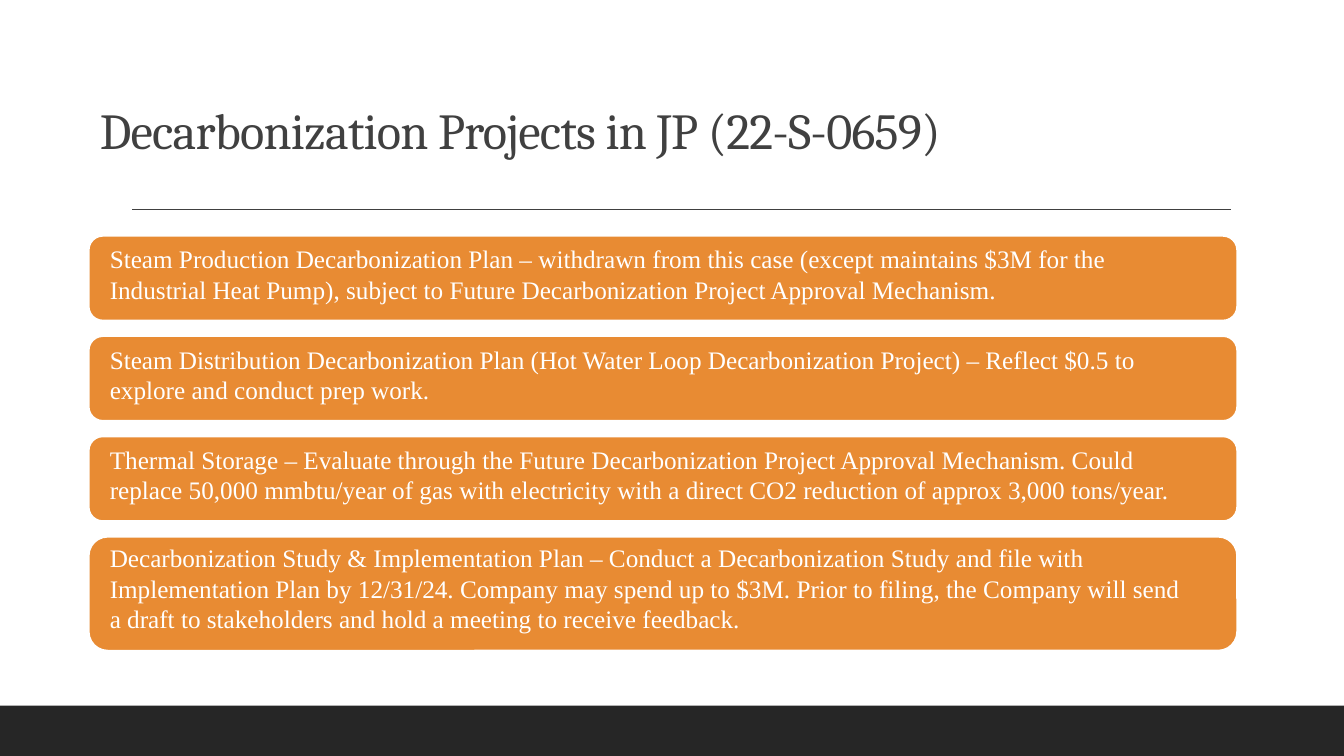
from lxml import etree
from pptx import Presentation
from pptx.dml.color import RGBColor
from pptx.enum.shapes import MSO_CONNECTOR, MSO_SHAPE
from pptx.enum.text import MSO_ANCHOR, MSO_AUTO_SIZE, PP_ALIGN
from pptx.oxml.ns import qn
from pptx.util import Inches, Pt

STRAIGHT = MSO_CONNECTOR.STRAIGHT
RECTANGLE, ROUNDED = MSO_SHAPE.RECTANGLE, MSO_SHAPE.ROUNDED_RECTANGLE
MIDDLE, BOTTOM = MSO_ANCHOR.MIDDLE, MSO_ANCHOR.BOTTOM
NO_AUTOFIT = MSO_AUTO_SIZE.NONE
LEFT = PP_ALIGN.LEFT

WIDTH, HEIGHT = 13.33, 7.5
DARK, GREY, ORANGE, WHITE = "262626", "404040", "E88B33", "FFFFFF"
TITLE = "Decarbonization Projects in JP (22-S-0659)"
CARD_GAP = 0.155
CORNER_INSET = 0.05  # text margin a rounded corner adds, per inch of height

# Card height and wording
PROJECTS = [
    (0.84, "Steam Production Decarbonization Plan – withdrawn from this case "
           "(except maintains $3M for the Industrial Heat Pump), subject to "
           "Future Decarbonization Project Approval Mechanism."),
    (0.84, "Steam Distribution Decarbonization Plan (Hot Water Loop "
           "Decarbonization Project) – Reflect $0.5 to explore and conduct "
           "prep work."),
    (0.84, "Thermal Storage – Evaluate through the Future Decarbonization "
           "Project Approval Mechanism. Could replace 50,000 mmbtu/year of gas "
           "with electricity with a direct CO2 reduction of approx 3,000 "
           "tons/year."),
    (1.13, "Decarbonization Study & Implementation Plan – Conduct a "
           "Decarbonization Study and file with Implementation Plan by "
           "12/31/24. Company may spend up to $3M. Prior to filing, the Company "
           "will send a draft to stakeholders and hold a meeting to receive "
           "feedback."),
]


def color(value):
    return RGBColor.from_string(value)


def format_text(para, font, size, value):
    para.alignment = LEFT
    for span in para.runs:
        span.font.name = font
        span.font.size = Pt(size)
        span.font.color.rgb = color(value)


def add_footer_band(page, left, top, width, height):
    band = page.shapes.add_shape(
        RECTANGLE, Inches(left), Inches(top), Inches(width), Inches(height))
    band.shadow.inherit = False
    band.fill.solid()
    band.fill.fore_color.rgb = color(DARK)
    band.line.fill.background()


def add_rule(page, left, top, width):
    rule = page.shapes.add_connector(
        STRAIGHT, Inches(left), Inches(top), Inches(left + width), Inches(top))
    rule.line.color.rgb = color(GREY)
    rule.line.width = Pt(1)
    etree.SubElement(rule.element.spPr, qn("a:effectLst"))


def fill_title(page, left, top, width, height):
    title = page.shapes.title
    title.left, title.top = Inches(left), Inches(top)
    title.width, title.height = Inches(width), Inches(height)
    frame = title.text_frame
    frame.text = TITLE
    frame.auto_size = NO_AUTOFIT
    frame.vertical_anchor = BOTTOM
    para = frame.paragraphs[0]
    para.line_spacing = 0.9
    format_text(para, "Cambria", 36, GREY)
    # Tighten the letter spacing by half a point
    for properties in para.runs[0].font._element.iter(qn("a:rPr")):
        properties.set("spc", "-50")


def add_card(page, left, top, width, height, wording):
    card = page.shapes.add_shape(
        ROUNDED, Inches(left), Inches(top), Inches(width), Inches(height))
    card.shadow.inherit = False
    card.fill.solid()
    card.fill.fore_color.rgb = color(ORANGE)
    card.line.color.rgb = color(WHITE)
    card.line.width = Pt(1.25)
    frame = card.text_frame
    frame.text = wording
    frame.word_wrap = True
    frame.vertical_anchor = MIDDLE
    corner = CORNER_INSET * height
    frame.margin_left = Inches(0.21 - corner)
    frame.margin_right = Inches(0.49 - corner)
    frame.margin_top = 0
    frame.margin_bottom = Inches(0.1 * height)
    format_text(frame.paragraphs[0], "Times New Roman", 18, WHITE)


def add_project_cards(page, left, top, width):
    for height, wording in PROJECTS:
        add_card(page, left, top, width, height, wording)
        top += height + CARD_GAP


def main():
    deck = Presentation()
    deck.slide_width, deck.slide_height = Inches(WIDTH), Inches(HEIGHT)
    page = deck.slides.add_slide(deck.slide_layouts.get_by_name("Title Only"))
    add_footer_band(page, 0, 7, WIDTH, 0.5)
    add_rule(page, 1.31, 2.08, 10.9)
    fill_title(page, 0.89, 0.8, 11.6, 0.84)
    add_project_cards(page, 0.88, 2.34, 11.39)
    deck.save("out.pptx")


if __name__ == "__main__":
    main()
